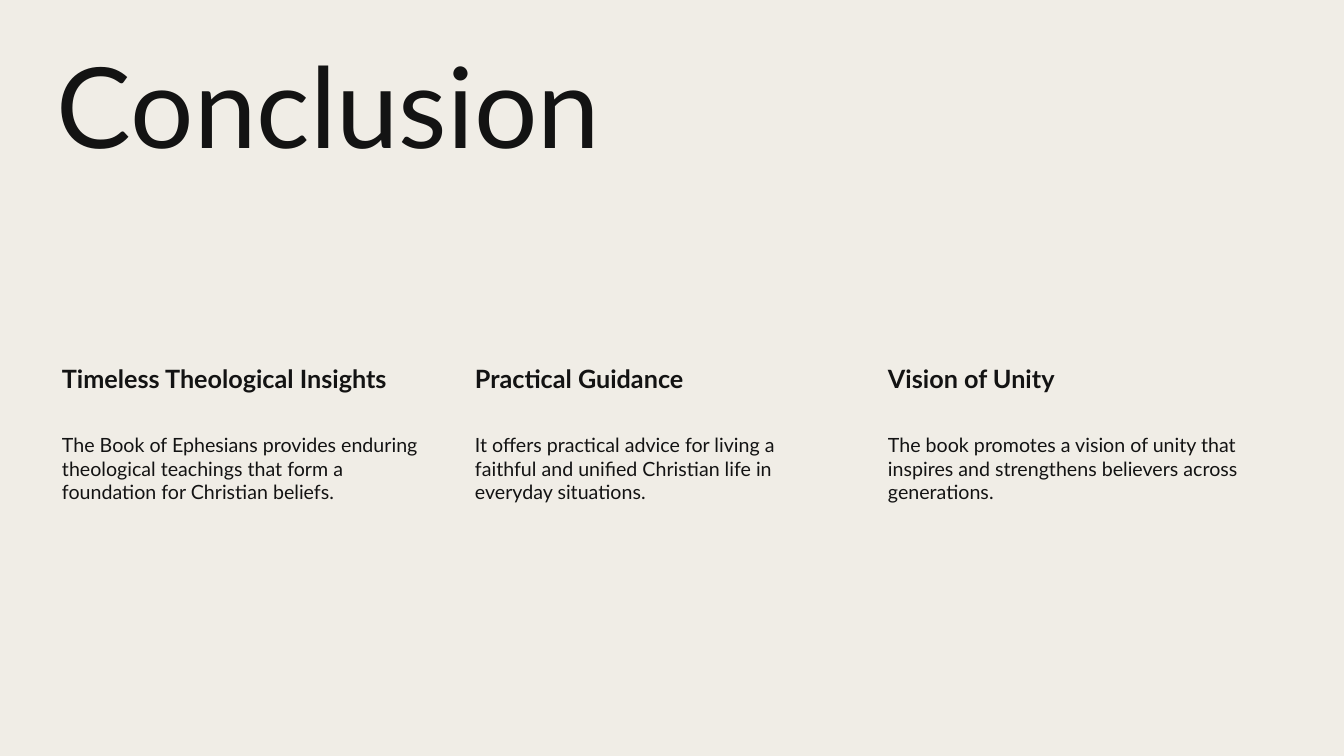
"""Build the conclusion slide: a large title above three columns of takeaways."""
from pptx import Presentation
from pptx.dml.color import RGBColor
from pptx.enum.text import MSO_ANCHOR, MSO_AUTO_SIZE, PP_ALIGN
from pptx.util import Pt

TOP = MSO_ANCHOR.TOP
NO_AUTOFIT = MSO_AUTO_SIZE.NONE
LEFT = PP_ALIGN.LEFT
INK = RGBColor(0x13, 0x13, 0x13)
PAPER = RGBColor(0xF0, 0xED, 0xE6)
FONT = "Lato"
SLIDE_W, SLIDE_H = 1344, 756
MARGIN = 47
COLUMN_W, COLUMN_STEP = 375, 413
TAKEAWAYS = [
    ("Timeless Theological Insights",
     "The Book of Ephesians provides enduring theological teachings "
     "that form a foundation for Christian beliefs."),
    ("Practical Guidance",
     "It offers practical advice for living a faithful and unified "
     "Christian life in everyday situations."),
    ("Vision of Unity",
     "The book promotes a vision of unity that inspires and strengthens "
     "believers across generations."),
]


def px(length):
    """Turn slide pixels into EMU."""
    return round(length * 12192000 / SLIDE_W)


def write(box, text, size, bold, insets):
    """Fill a box with one left-aligned, top-anchored paragraph."""
    frame = box.text_frame
    frame.text = text
    frame.word_wrap = True
    frame.auto_size = NO_AUTOFIT
    frame.vertical_anchor = TOP
    frame.margin_left, frame.margin_top, frame.margin_right, frame.margin_bottom = map(px, insets)
    paragraph = frame.paragraphs[0]
    paragraph.alignment = LEFT
    font = paragraph.runs[0].font
    font.name = FONT
    font.size = Pt(size)
    font.bold = bold
    font.color.rgb = INK


prs = Presentation()
prs.slide_width, prs.slide_height = px(SLIDE_W), px(SLIDE_H)
slide = prs.slides.add_slide(prs.slide_layouts[5])
slide.background.fill.solid()
slide.background.fill.fore_color.rgb = PAPER

title = slide.shapes.title
title.left, title.top, title.width, title.height = px(MARGIN), px(47), px(1201), px(179)
write(title, "Conclusion", 80, False, (10, 5, 10, 5))
title.text_frame.paragraphs[0].line_spacing = 0.9

for column, (heading, summary) in enumerate(TAKEAWAYS):
    left = px(MARGIN + column * COLUMN_STEP)
    heading_box = slide.shapes.add_textbox(left, px(360), px(COLUMN_W), px(71))
    write(heading_box, heading, 18, True, (15, 3, 3, 3))
    summary_box = slide.shapes.add_textbox(left, px(431), px(COLUMN_W), px(241))
    write(summary_box, summary, 14, False, (15, 2, 2, 2))

prs.save("out.pptx")
